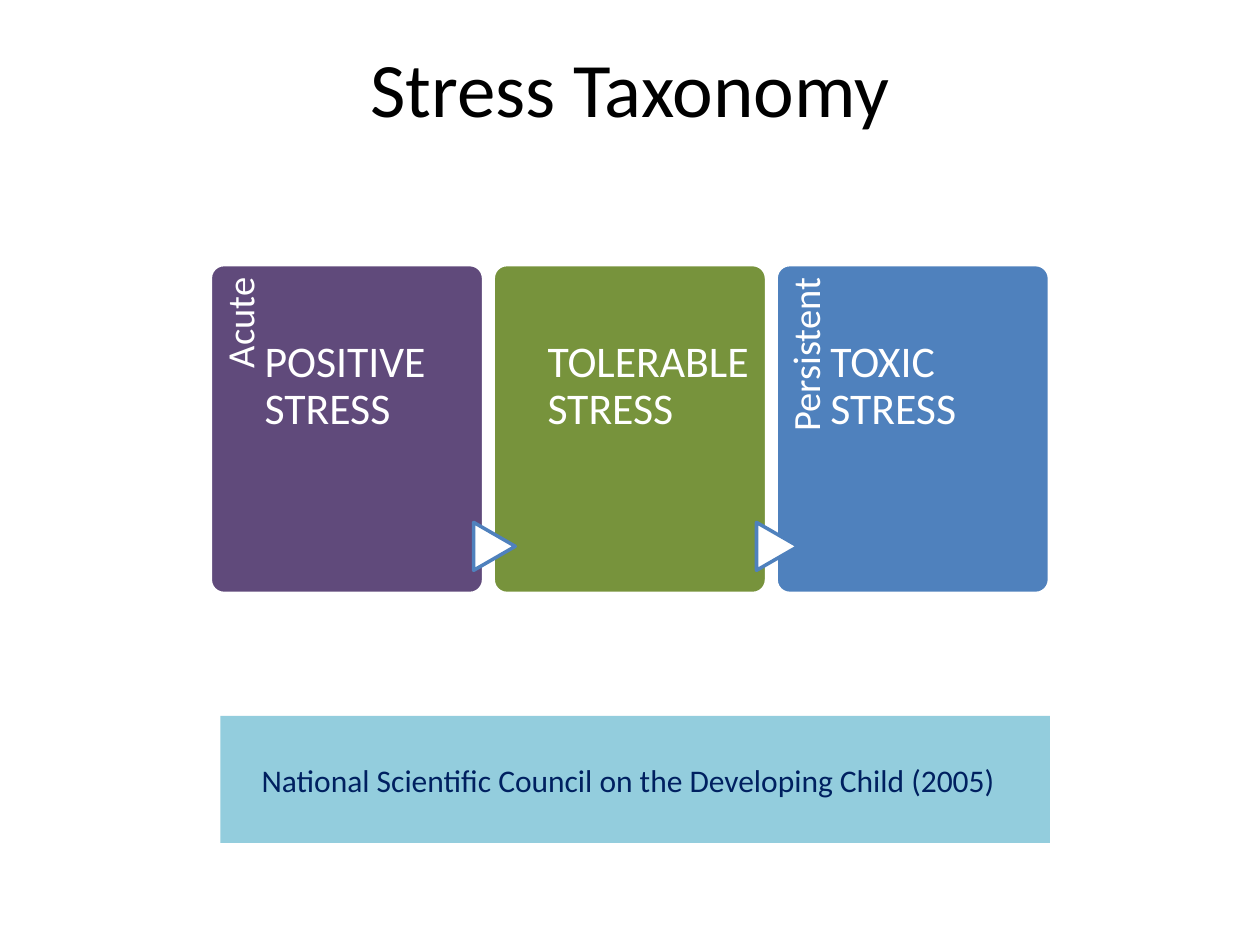
"""Builds the Stress Taxonomy slide: three stages of stress and their source."""
from pptx import Presentation
from pptx.dml.color import RGBColor
from pptx.enum.shapes import MSO_SHAPE
from pptx.enum.text import MSO_ANCHOR, PP_ALIGN
from pptx.util import Pt

ROUNDED, TRIANGLE, RECTANGLE = (
    MSO_SHAPE.ROUNDED_RECTANGLE, MSO_SHAPE.FLOWCHART_EXTRACT, MSO_SHAPE.RECTANGLE)
LEFT, CENTER, RIGHT = PP_ALIGN.LEFT, PP_ALIGN.CENTER, PP_ALIGN.RIGHT
TOP, MIDDLE = MSO_ANCHOR.TOP, MSO_ANCHOR.MIDDLE

TITLE = "Stress Taxonomy"
STAGES = [
    ("POSITIVE STRESS", "Acute", "604A7B"),
    ("TOLERABLE STRESS", "", "77933C"),
    ("TOXIC STRESS", "Persistent", "4F81BD"),
]
SOURCE = "National Scientific Council on the Developing Child (2005)"
WHITE, BLUE = "FFFFFF", "4F81BD"

CARD_LEFT, CARD_TOP, CARD_WIDTH, CARD_HEIGHT, PITCH = 120.2, 151.2, 156.2, 187.9, 161.65
NAME_OFFSET, NAME_WIDTH = 31, 116.6
LABEL_OFFSET, LABEL_MIDDLE, LABEL_WIDTH, LABEL_HEIGHT = 15.9, 227.9, 154, 31
ARROW_MIDDLE, ARROW_WIDTH, ARROW_HEIGHT = 312.2, 27.4, 23.8


def color(value):
    return RGBColor.from_string(value)


def centered(x, y, width, height):
    return x - width / 2, y - height / 2, width, height


def write(shape, text, size, ink, align=LEFT, anchor=TOP, insets=(0, 0, 0, 0), spacing=1.0):
    frame = shape.text_frame
    left, top, right, bottom = map(Pt, insets)
    layout = {"word_wrap": True, "vertical_anchor": anchor, "margin_left": left,
              "margin_top": top, "margin_right": right, "margin_bottom": bottom}
    for name, value in layout.items():
        setattr(frame, name, value)
    para = frame.paragraphs[0]
    para.alignment, para.line_spacing = align, spacing
    span = para.add_run()
    span.text = text
    for name, value in {"name": "Calibri", "size": Pt(size)}.items():
        setattr(span.font, name, value)
    span.font.color.rgb = color(ink)


def add_box(page, place, rotation=0):
    box = page.shapes.add_textbox(*map(Pt, place))
    box.rotation = rotation
    return box


def add_shape(page, kind, place, fill, line=None, rotation=0):
    shape = page.shapes.add_shape(kind, *map(Pt, place))
    shape.shadow.inherit = False
    shape.rotation = rotation
    shape.fill.solid()
    shape.fill.fore_color.rgb = color(fill)
    if line:
        shape.line.color.rgb = color(line)
        shape.line.width = Pt(2)
    else:
        shape.line.fill.background()
    return shape


def add_stage(page, index, name, label, fill):
    left = CARD_LEFT + index * PITCH
    card = add_shape(page, ROUNDED, (left, CARD_TOP, CARD_WIDTH, CARD_HEIGHT), fill, WHITE)
    card.adjustments[0] = 0.05
    if label:
        place = centered(left + LABEL_OFFSET, LABEL_MIDDLE, LABEL_WIDTH, LABEL_HEIGHT)
        write(add_box(page, place, 270), label, 22, WHITE, RIGHT,
              insets=(0, 5.8, 7.9, 0), spacing=0.9)
    if index:
        place = centered(left + 0.7, ARROW_MIDDLE, ARROW_WIDTH, ARROW_HEIGHT)
        add_shape(page, TRIANGLE, place, WHITE, BLUE, 90)
    name_box = add_box(page, (left + NAME_OFFSET, CARD_TOP, NAME_WIDTH, CARD_HEIGHT))
    write(name_box, name, 25, WHITE, insets=(0, 43, 0, 0), spacing=0.9)


def main():
    deck = Presentation()
    deck.slide_width, deck.slide_height = Pt(720), Pt(540)
    page = deck.slides.add_slide(deck.slide_layouts[5])
    title = page.shapes.title
    title.left, title.top, title.width, title.height = map(Pt, (36, 21.6, 648, 56.2))
    write(title, TITLE, 44, "000000", CENTER, MIDDLE, (7.2, 3.6, 7.2, 3.6))
    for index, stage in enumerate(STAGES):
        add_stage(page, index, *stage)
    banner = add_shape(page, RECTANGLE, (126, 409, 474, 72.7), "93CDDD")
    write(banner, SOURCE, 18, "002060", insets=(23.5, 25.6, 7.2, 3.6))
    deck.save("out.pptx")


if __name__ == "__main__":
    main()
